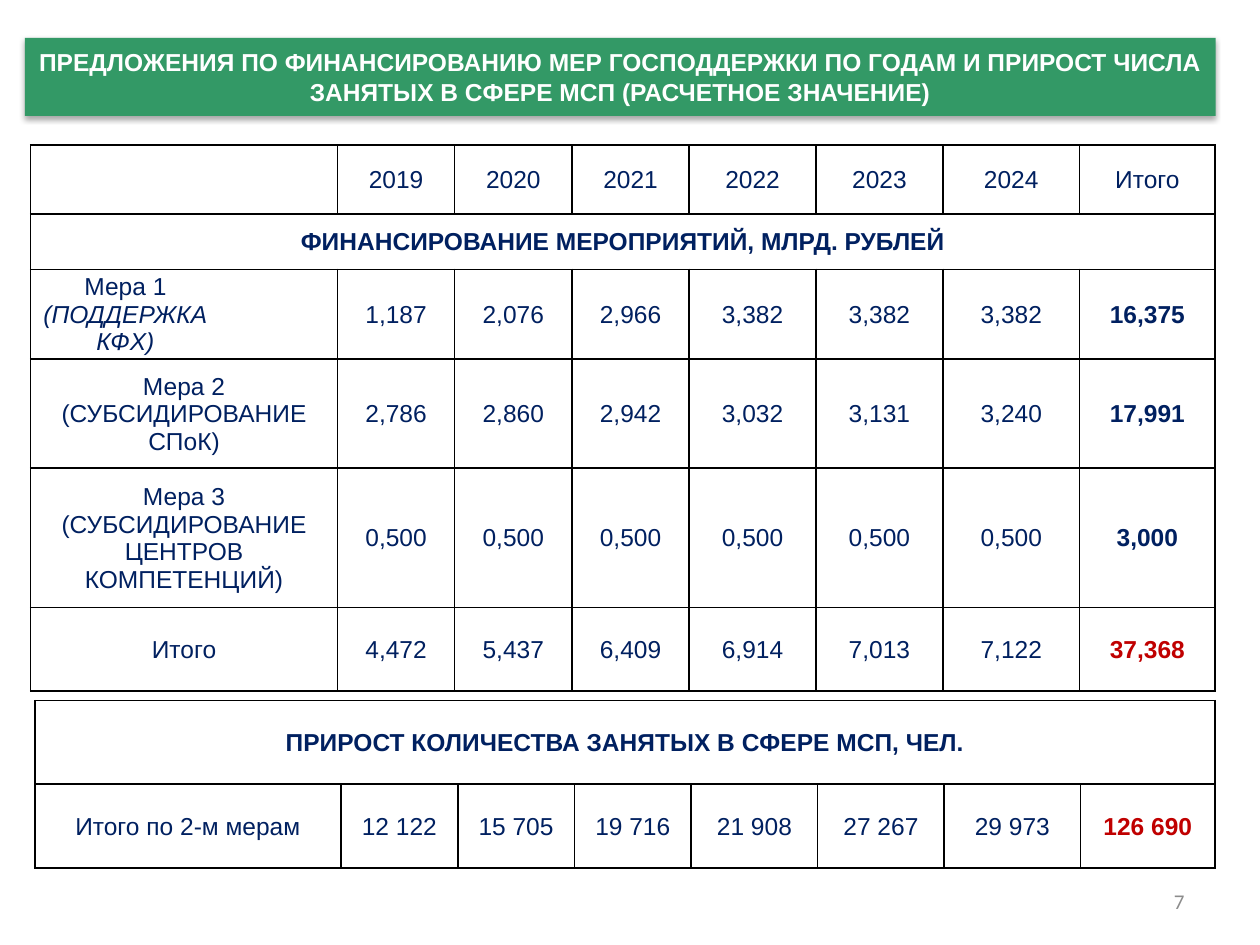
from lxml import etree
from pptx import Presentation
from pptx.dml.color import RGBColor
from pptx.enum.shapes import MSO_SHAPE
from pptx.enum.text import MSO_ANCHOR, PP_ALIGN
from pptx.oxml import parse_xml
from pptx.oxml.ns import nsdecls, qn
from pptx.util import Pt

NAVY, RED, GREEN, WHITE, GREY = "002060", "C00000", "339966", "FFFFFF", "8C8C8C"
TITLE = ("ПРЕДЛОЖЕНИЯ ПО ФИНАНСИРОВАНИЮ МЕР ГОСПОДДЕРЖКИ ПО ГОДАМ И ПРИРОСТ ЧИСЛА "
         "ЗАНЯТЫХ В СФЕРЕ МСП (РАСЧЕТНОЕ ЗНАЧЕНИЕ)")
PAGE = "7"

FUNDING = [
    ["", "2019", "2020", "2021", "2022", "2023", "2024", "Итого"],
    ["ФИНАНСИРОВАНИЕ МЕРОПРИЯТИЙ, МЛРД. РУБЛЕЙ"],
    ["Мера 1\n(ПОДДЕРЖКА КФХ)", "1,187", "2,076", "2,966", "3,382", "3,382", "3,382", "16,375"],
    ["Мера 2\n(СУБСИДИРОВАНИЕ СПоК)", "2,786", "2,860", "2,942", "3,032", "3,131", "3,240", "17,991"],
    ["Мера 3\n(СУБСИДИРОВАНИЕ ЦЕНТРОВ КОМПЕТЕНЦИЙ)",
     "0,500", "0,500", "0,500", "0,500", "0,500", "0,500", "3,000"],
    ["Итого", "4,472", "5,437", "6,409", "6,914", "7,013", "7,122", "37,368"],
]
GROWTH = [
    ["ПРИРОСТ КОЛИЧЕСТВА ЗАНЯТЫХ В СФЕРЕ МСП, ЧЕЛ."],
    ["Итого по 2-м мерам", "12 122", "15 705", "19 716", "21 908", "27 267", "29 973", "126 690"],
]
FUNDING_COLS = [175.4, 67, 67, 67, 72.5, 72.5, 78.2, 77.4]
GROWTH_COLS = [175, 66.7, 66.7, 66.7, 72.3, 72.3, 77.9, 76.9]
FUNDING_ROWS = [39.5, 31.5, 47.8, 62.5, 79.7, 47.8]
GROWTH_ROWS = [47.8, 47.8]


def rgb(color):
    return RGBColor.from_string(color)


def style(p, color, size=14, name="Arial", bold=False, align=PP_ALIGN.CENTER):
    p.alignment = align
    p.font.size, p.font.name, p.font.bold = Pt(size), name, bold
    p.font.color.rgb = rgb(color)


def set_borders(cell):
    cell.fill.background()
    tc_pr = cell._tc.get_or_add_tcPr()
    for i, side in enumerate(("lnL", "lnR", "lnT", "lnB")):
        tc_pr.insert(i, parse_xml(
            f'<a:{side} {nsdecls("a")} w="12700"><a:solidFill><a:srgbClr val="000000"/>'
            f'</a:solidFill></a:{side}>'))


def add_grid(s, rows, x, y, widths, heights):
    table = s.shapes.add_table(len(rows), len(widths), Pt(x), Pt(y),
                               Pt(sum(widths)), Pt(sum(heights))).table
    table.first_row = table.horz_banding = False
    for column, width in zip(table.columns, widths):
        column.width = Pt(width)
    for row, height in zip(table.rows, heights):
        row.height = Pt(height)
        for cell in row.cells:
            set_borders(cell)
    last = len(widths) - 1
    for i, values in enumerate(rows):
        heading = len(values) == 1
        if heading:
            table.cell(i, 0).merge(table.cell(i, last))
        for j, text in enumerate(values):
            cell = table.cell(i, j)
            cell.vertical_anchor = MSO_ANCHOR.MIDDLE
            cell.margin_left = cell.margin_right = cell.margin_top = Pt(0.7)
            cell.margin_bottom = 0
            cell.text = text
            total = j == last and i > 0
            grand = total and i == len(rows) - 1
            for p in cell.text_frame.paragraphs:
                style(p, RED if grand else NAVY, bold=heading or total)
    return table


prs = Presentation()
prs.slide_width, prs.slide_height = Pt(720), Pt(540)
s = prs.slides.add_slide(prs.slide_layouts[6])

number = s.shapes.add_textbox(Pt(516), Pt(500.5), Pt(168), Pt(28.75))
tf = number.text_frame
tf.word_wrap = True
tf.vertical_anchor = MSO_ANCHOR.MIDDLE
tf.text = PAGE
style(tf.paragraphs[0], GREY, 12, "Calibri", align=PP_ALIGN.RIGHT)

funding = add_grid(s, FUNDING, 17.5, 82.9, FUNDING_COLS, FUNDING_ROWS)
measure, support = funding.cell(2, 0).text_frame.paragraphs
measure._p.get_or_add_pPr().set("marR", str(Pt(67)))
support.font.italic = True

banner = s.shapes.add_shape(MSO_SHAPE.RECTANGLE, Pt(14.2), Pt(21.6), Pt(680.4), Pt(44.6))
banner.fill.solid()
banner.fill.fore_color.rgb = rgb(GREEN)
banner.line.fill.background()
banner.shadow.inherit = False
effects = banner._element.spPr.find(qn("a:effectLst"))
shadow = etree.SubElement(effects, qn("a:outerShdw"), blurRad=str(Pt(3.1)),
                          dist=str(Pt(1.8)), dir="5400000", rotWithShape="0")
tint = etree.SubElement(shadow, qn("a:srgbClr"), val="000000")
etree.SubElement(tint, qn("a:alpha"), val="35000")
tf = banner.text_frame
tf.word_wrap = True
tf.vertical_anchor = MSO_ANCHOR.MIDDLE
tf.text = TITLE
style(tf.paragraphs[0], WHITE, bold=True)

add_grid(s, GROWTH, 19.9, 400.3, GROWTH_COLS, GROWTH_ROWS)

prs.save("out.pptx")
